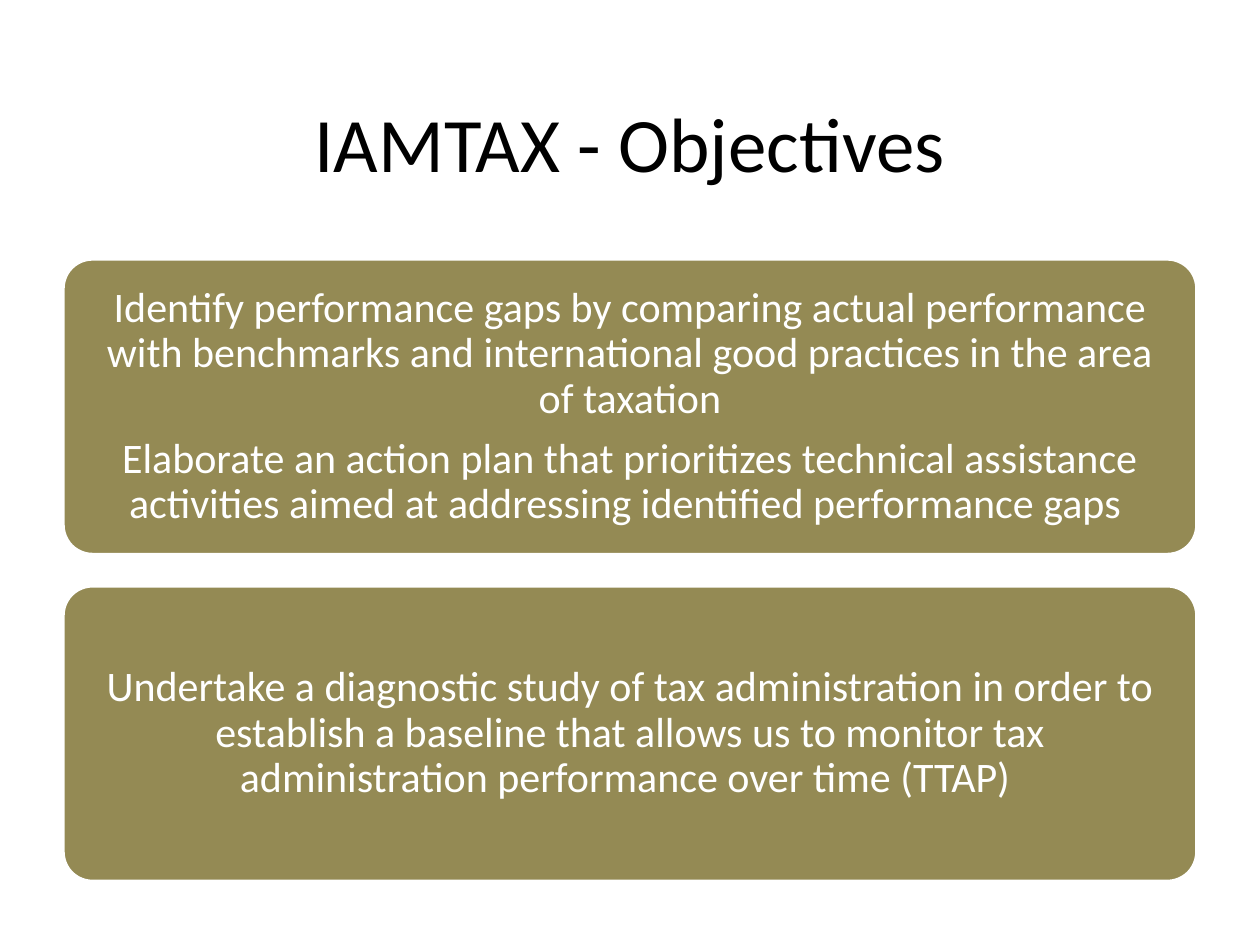
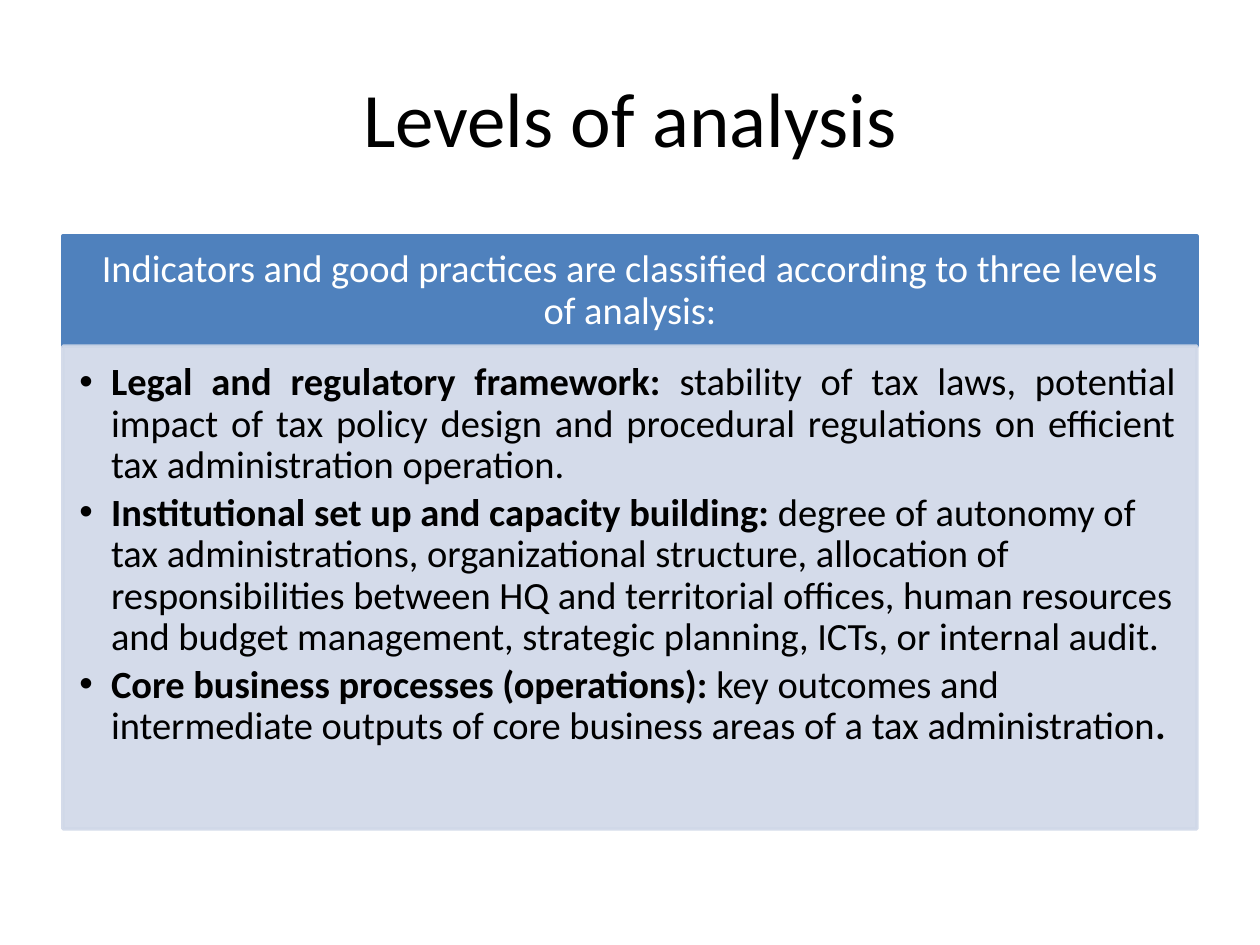
from lxml.etree import SubElement
from pptx import Presentation
from pptx.dml.color import RGBColor
from pptx.enum.shapes import MSO_SHAPE
from pptx.enum.text import MSO_ANCHOR, PP_ALIGN
from pptx.oxml.ns import qn
from pptx.util import Cm, Pt

COLOURS = {
    "ink": "000000",
    "paper": "FFFFFF",
    "olive": "948A54",
    "blue": "4F81BD",
    "pale": "D0D8E8",
}
FONT = "Calibri"
LEFT, WIDTH = 1.27, 22.86
TITLE_HEIGHT = 3.18

OBJECTIVES = [
    [
        "Identify performance gaps by comparing actual performance with benchmarks "
        "and international good practices in the area of taxation",
        "Elaborate an action plan that prioritizes technical assistance activities "
        "aimed at addressing identified performance gaps ",
    ],
    [
        "Undertake a diagnostic study of tax administration in order to establish a "
        "baseline that allows us to monitor tax administration performance over time (TTAP) ",
    ],
]
LEVELS_HEADING = "Indicators and good practices are classified according to three levels of analysis:"
LEVELS = [
    (PP_ALIGN.JUSTIFY, [
        ("Legal and regulatory framework: ", True),
        ("stability of tax laws, potential impact of tax policy design and procedural "
         "regulations on efficient tax administration operation.", False),
    ]),
    (PP_ALIGN.LEFT, [
        ("Institutional set up and capacity building: ", True),
        ("degree of autonomy of tax administrations, organizational structure, allocation "
         "of responsibilities between HQ and territorial offices, human resources and "
         "budget management, strategic planning, ICTs, or internal audit.", False),
    ]),
    (PP_ALIGN.LEFT, [
        ("Core business processes (operations): ", True),
        ("key outcomes and intermediate outputs of core business areas of a tax "
         "administration", False),
        (".", True),
    ]),
]


def colour(name):
    """Return the named colour of the palette."""
    return RGBColor.from_string(COLOURS[name])


def set_frame(frame, anchor, insets):
    """Set wrapping, anchor and the left, top, right and bottom insets in cm."""
    sides = ("margin_left", "margin_top", "margin_right", "margin_bottom")
    values = {"word_wrap": True, "vertical_anchor": anchor}
    values.update(zip(sides, map(Cm, insets)))
    for name, value in values.items():
        setattr(frame, name, value)


def add_bullet(para):
    """Give a paragraph a hanging round bullet."""
    properties = para._p.get_or_add_pPr()
    properties.set("marL", str(Cm(0.64)))
    properties.set("indent", str(-Cm(0.64)))
    SubElement(properties, qn("a:buFont"), typeface="Arial")
    SubElement(properties, qn("a:buChar"), char="•")


def write(frame, paragraphs, size, ink, after=0, spacing=0.9, bullets=False):
    """Fill a frame with (alignment, [(text, bold), ...]) paragraphs."""
    for index, (alignment, spans) in enumerate(paragraphs):
        para = frame.add_paragraph() if index else frame.paragraphs[0]
        if bullets:
            add_bullet(para)
        layout = {"alignment": alignment, "line_spacing": spacing, "space_after": Pt(after)}
        for name, value in layout.items():
            setattr(para, name, value)
        for text, bold in spans:
            span = para.add_run()
            span.text = text
            for name, value in {"name": FONT, "size": Pt(size), "bold": bold}.items():
                setattr(span.font, name, value)
            span.font.color.rgb = colour(ink)


def centred(texts):
    """Turn plain texts into centred regular paragraphs."""
    return [(PP_ALIGN.CENTER, [(text, False)]) for text in texts]


def add_title(page, text, top):
    """Place the slide title."""
    box = page.shapes.add_textbox(Cm(LEFT), Cm(top), Cm(WIDTH), Cm(TITLE_HEIGHT))
    set_frame(box.text_frame, MSO_ANCHOR.MIDDLE, (0.25, 0.13, 0.25, 0.13))
    write(box.text_frame, centred([text]), 44, "ink", spacing=1.0)


def add_panel(page, kind, top, height, fill, line, opacity=100):
    """Draw a full-width filled panel and return it."""
    panel = page.shapes.add_shape(kind, Cm(LEFT), Cm(top), Cm(WIDTH), Cm(height))
    panel.shadow.inherit = False
    panel.fill.solid()
    panel.fill.fore_color.rgb = colour(fill)
    panel.line.color.rgb = colour(line)
    panel.line.width = Pt(2)
    if opacity < 100:
        for paint in panel._element.spPr.iter(qn("a:srgbClr")):
            SubElement(paint, qn("a:alpha"), val=str(opacity * 1000))
    return panel


def add_objectives(page, top, height, gap):
    """Stack one rounded panel for each group of objectives."""
    for index, texts in enumerate(OBJECTIVES):
        panel = add_panel(page, MSO_SHAPE.ROUNDED_RECTANGLE, top + index * (height + gap),
                          height, "olive", "paper")
        panel.adjustments[0] = 0.1
        set_frame(panel.text_frame, MSO_ANCHOR.MIDDLE, (0.43,) * 4)
        write(panel.text_frame, centred(texts), 24, "paper", after=8.4)


def add_levels(page, top, heading_height, body_height):
    """Place the heading band and the bulleted panel beneath it."""
    heading = add_panel(page, MSO_SHAPE.RECTANGLE, top, heading_height, "blue", "blue")
    set_frame(heading.text_frame, MSO_ANCHOR.MIDDLE, (0.43, 0.25, 0.43, 0.25))
    write(heading.text_frame, centred([LEVELS_HEADING]), 22, "paper")
    body = add_panel(page, MSO_SHAPE.RECTANGLE, top + heading_height, body_height,
                     "pale", "pale", opacity=90)
    set_frame(body.text_frame, MSO_ANCHOR.TOP, (0.33, 0.33, 0.43, 0.48))
    write(body.text_frame, LEVELS, 22, "ink", after=3.3, bullets=True)


def main():
    """Build and save the deck."""
    deck = Presentation()
    deck.slide_width, deck.slide_height = Cm(25.4), Cm(19.05)
    blank = deck.slide_layouts[6]

    page = deck.slides.add_slide(blank)
    add_title(page, "IAMTAX - Objectives", 1.27)
    add_objectives(page, top=5.22, height=5.96, gap=0.63)

    page = deck.slides.add_slide(blank)
    add_title(page, "Levels of analysis", 0.76)
    add_levels(page, top=4.76, heading_height=2.22, body_height=9.73)

    deck.save("out.pptx")


if __name__ == "__main__":
    main()
